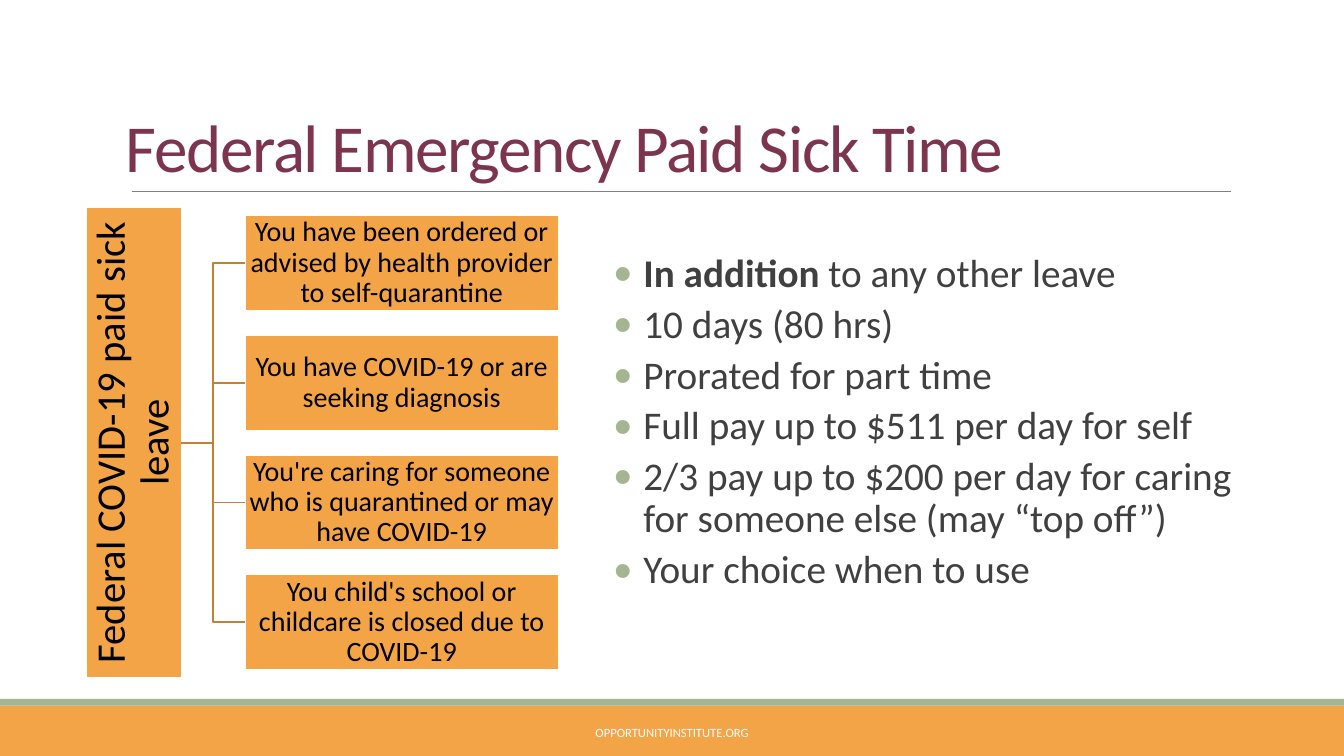
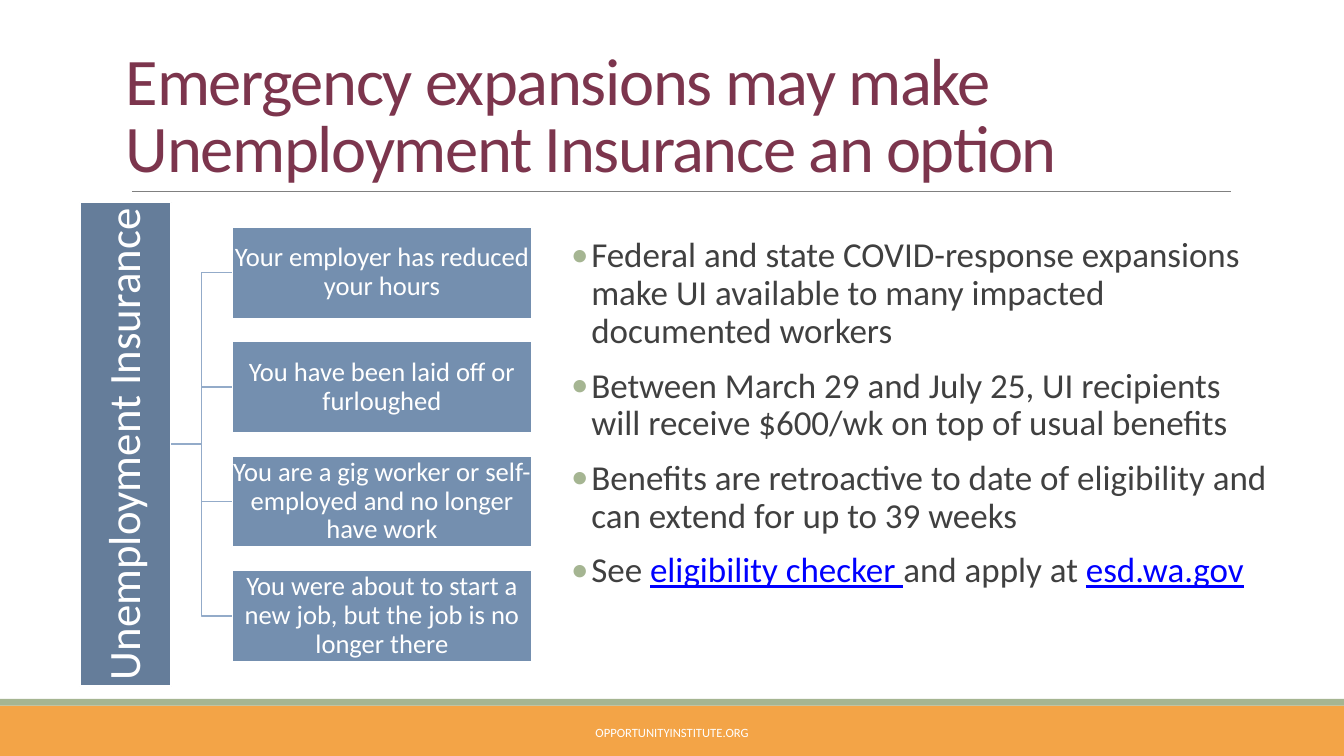
import dataclasses

import pptx
import pptx.dml.color
import pptx.enum.shapes
import pptx.enum.text
import pptx.oxml.ns
import pptx.util
from lxml import etree

COLUMNS, ROWS = 16, 9
CELL = pptx.util.Inches(7.5) / ROWS
FONT = "Calibri"

ORANGE, GREEN, PLUM = "F3A447", "A5B592", "7C354D"
WHITE, BLACK, GRAY, DARK = "FFFFFF", "000000", "808080", "404040"
LINK_BLUE = "0000FF"

ALIGN = pptx.enum.text.PP_ALIGN
ANCHOR = pptx.enum.text.MSO_ANCHOR
CONNECTOR = pptx.enum.shapes.MSO_CONNECTOR
BOTTOM_SIDE_RIGHT, SIDE_LEFT = 3, 1


@dataclasses.dataclass
class TextStyle:
    size: float
    color: str
    align: int = ALIGN.LEFT
    anchor: int = ANCHOR.MIDDLE
    inset: float = 0
    line_spacing: float = 0.9
    space_before: float = 0
    letter_spacing: float = 0
    bullet_indent: float = 0


@dataclasses.dataclass
class TreeStyle:
    """Colours and grid measures of a bracket tree."""
    left: float
    middle: float
    spine_length: float
    node_height: float
    spine_fill: str
    card_fill: str
    bracket_color: str
    text_color: str
    spine_size: float
    card_size: float


def grid(*cells):
    """Turn grid cells into slide lengths."""
    return [round(cell * CELL) for cell in cells]


def rgb(color):
    return pptx.dml.color.RGBColor.from_string(color)


def add_bullet(paragraph, indent):
    properties = paragraph._p.get_or_add_pPr()
    width = pptx.util.Inches(indent)
    properties.set("marL", str(width))
    properties.set("indent", str(-width))
    qn = pptx.oxml.ns.qn
    bullet_color = etree.SubElement(properties, qn("a:buClr"))
    etree.SubElement(bullet_color, qn("a:srgbClr"), val=GREEN)
    etree.SubElement(properties, qn("a:buFont"), typeface=FONT)
    etree.SubElement(properties, qn("a:buChar"), char="•")


def add_run(paragraph, text, style, kind=""):
    """Add one run; kind is empty, "bold" or "link"."""
    run = paragraph.add_run()
    run.text = text
    font = run.font
    font.name, font.size = FONT, pptx.util.Pt(style.size)
    font.color.rgb = rgb(LINK_BLUE if kind == "link" else style.color)
    if kind == "bold":
        font.bold = True
    if kind == "link":
        font.underline = True
    if style.letter_spacing:
        run._r.get_or_add_rPr().set("spc", str(round(style.letter_spacing * 100)))


def write(shape, paragraphs, style):
    """Fill a shape with paragraphs, each a list of (text, kind) runs."""
    frame = shape.text_frame
    frame.word_wrap = True
    frame.vertical_anchor = style.anchor
    inset = pptx.util.Inches(style.inset)
    frame.margin_left = frame.margin_right = inset
    frame.margin_top = frame.margin_bottom = inset
    for index, runs in enumerate(paragraphs):
        paragraph = frame.add_paragraph() if index else frame.paragraphs[0]
        if style.bullet_indent:
            add_bullet(paragraph, style.bullet_indent)
        paragraph.alignment = style.align
        paragraph.line_spacing = style.line_spacing
        if index:
            paragraph.space_before = pptx.util.Pt(style.space_before)
        for text, kind in runs:
            if text == "\n":
                paragraph.add_line_break()
            else:
                add_run(paragraph, text, style, kind)


def add_text(slide, place, paragraphs, style):
    write(slide.shapes.add_textbox(*grid(*place)), paragraphs, style)


def add_box(slide, place, fill, border=None):
    shape = slide.shapes.add_shape(
        pptx.enum.shapes.MSO_SHAPE.RECTANGLE, *grid(*place))
    shape.shadow.inherit = False
    shape.fill.solid()
    shape.fill.fore_color.rgb = rgb(fill)
    if border:
        shape.line.color.rgb = rgb(border)
        shape.line.width = pptx.util.Pt(1.25)
    else:
        shape.line.fill.background()
    return shape


def add_line(slide, kind, ends, color, width):
    line = slide.shapes.add_connector(kind, *grid(*ends))
    line.line.color.rgb = rgb(color)
    line.line.width = pptx.util.Pt(width)
    etree.SubElement(line._element.spPr, pptx.oxml.ns.qn("a:effectLst"))
    return line


def add_page(presentation, title, title_size):
    """Add a slide with the shared bands, rule, footer and title."""
    slide = presentation.slides.add_slide(presentation.slide_layouts[6])
    add_box(slide, (0, 8.4, COLUMNS, 0.6), ORANGE)
    add_box(slide, (0, 8.32, COLUMNS, 0.08), GREEN)
    add_line(slide, CONNECTOR.STRAIGHT, (1.57, 2.28, 14.65, 2.28), GRAY, 0.5)
    add_text(slide, (4.9, 8.57, 6.2, 0.3), [[("OPPORTUNITYINSTITUTE.ORG", "")]],
             TextStyle(9, WHITE, ALIGN.CENTER, inset=0.05, line_spacing=1))
    add_text(slide, (1.44, 0.37, 13.2, 1.91), [title],
             TextStyle(title_size, PLUM, anchor=ANCHOR.BOTTOM, inset=0.05,
                       line_spacing=0.85, letter_spacing=-1))
    return slide


def add_bullets(slide, place, paragraphs, size, space_before, indent):
    add_text(slide, place, paragraphs,
             TextStyle(size, DARK, anchor=ANCHOR.TOP, space_before=space_before,
                       bullet_indent=indent))


def add_tree(slide, heading, reasons, style):
    """Draw an upright heading bracketed to an evenly spaced stack of cards."""
    height = style.node_height
    step = 1.25 * height
    card_left = style.left + 1.66 * height
    stack_top = style.middle - (step * (len(reasons) - 1) + height) / 2

    spine = add_box(slide, (style.left, style.middle - style.spine_length / 2,
                            height, style.spine_length), style.spine_fill, WHITE)
    write(spine, [[(heading, "")]],
          TextStyle(style.spine_size, style.text_color, ALIGN.CENTER, inset=0.02))
    spine.text_frame._txBody.bodyPr.set("vert", "vert270")

    card_style = TextStyle(style.card_size, style.text_color, ALIGN.CENTER, inset=0.01)
    for index, reason in enumerate(reasons):
        top = stack_top + index * step
        card = add_box(slide, (card_left, top, 3.28 * height, height),
                       style.card_fill, WHITE)
        write(card, [[(reason, "")]], card_style)
        bracket = add_line(slide, CONNECTOR.ELBOW,
                           (style.left + height, style.middle, card_left, top + height / 2),
                           style.bracket_color, 1.25)
        bracket.begin_connect(spine, BOTTOM_SIDE_RIGHT)
        bracket.end_connect(card, SIDE_LEFT)


def add_sick_time(presentation):
    slide = add_page(presentation, [("Federal Emergency Paid Sick Time", "")], 48)
    add_bullets(slide, (7.3, 3.02, 7.88, 5.12), [
        [("In addition ", "bold"), ("to any other leave", "")],
        [("10 days (80 hrs)", "")],
        [("Prorated for part time", "")],
        [("Full pay up to $511 per day for self", "")],
        [("2/3 pay up to $200 per day for caring for someone else (may “top off”)", "")],
        [("Your choice when to use", "")],
    ], size=28, space_before=6, indent=0.3)
    add_tree(slide, "Federal COVID-19 paid sick leave", [
        "You have been ordered or advised by health provider to self-quarantine",
        "You have COVID-19 or are seeking diagnosis",
        "You're caring for someone who is quarantined or may have COVID-19",
        "You child's school or childcare is closed due to COVID-19",
    ], TreeStyle(left=1.02, middle=5.27, spine_length=5.6, node_height=1.14,
                 spine_fill=ORANGE, card_fill=ORANGE, bracket_color="C18238",
                 text_color=BLACK, spine_size=29, card_size=20))


def add_unemployment(presentation):
    slide = add_page(presentation, [
        ("Emergency expansions may make ", ""), ("\n", ""),
        ("Unemployment Insurance an option", "")], 47.5)
    add_bullets(slide, (6.8, 2.83, 8.36, 5.29), [
        [("Federal and state COVID-response expansions make UI available to many "
          "impacted documented workers", "")],
        [("Between March 29 and July 25, UI recipients will receive $600/wk on top "
          "of usual benefits", "")],
        [("Benefits are retroactive to date of eligibility and can extend for up "
          "to 39 weeks", "")],
        [("See ", ""), ("eligibility checker ", "link"), ("and apply at ", ""),
         ("esd.wa.gov", "link")],
    ], size=25, space_before=12, indent=0.2)
    add_tree(slide, "Unemployment Insurance", [
        "Your employer has reduced your hours",
        "You have been laid off or furloughed",
        "You are a gig worker or self-employed and no longer have work",
        "You were about to start a new job, but the job is no longer there",
    ], TreeStyle(left=0.95, middle=5.29, spine_length=5.76, node_height=1.09,
                 spine_fill="657D9A", card_fill="748FAF", bracket_color="93ABC9",
                 text_color=WHITE, spine_size=32, card_size=19))


def main():
    presentation = pptx.Presentation()
    presentation.slide_width, presentation.slide_height = grid(COLUMNS, ROWS)
    add_sick_time(presentation)
    add_unemployment(presentation)
    presentation.save("out.pptx")


if __name__ == "__main__":
    main()
